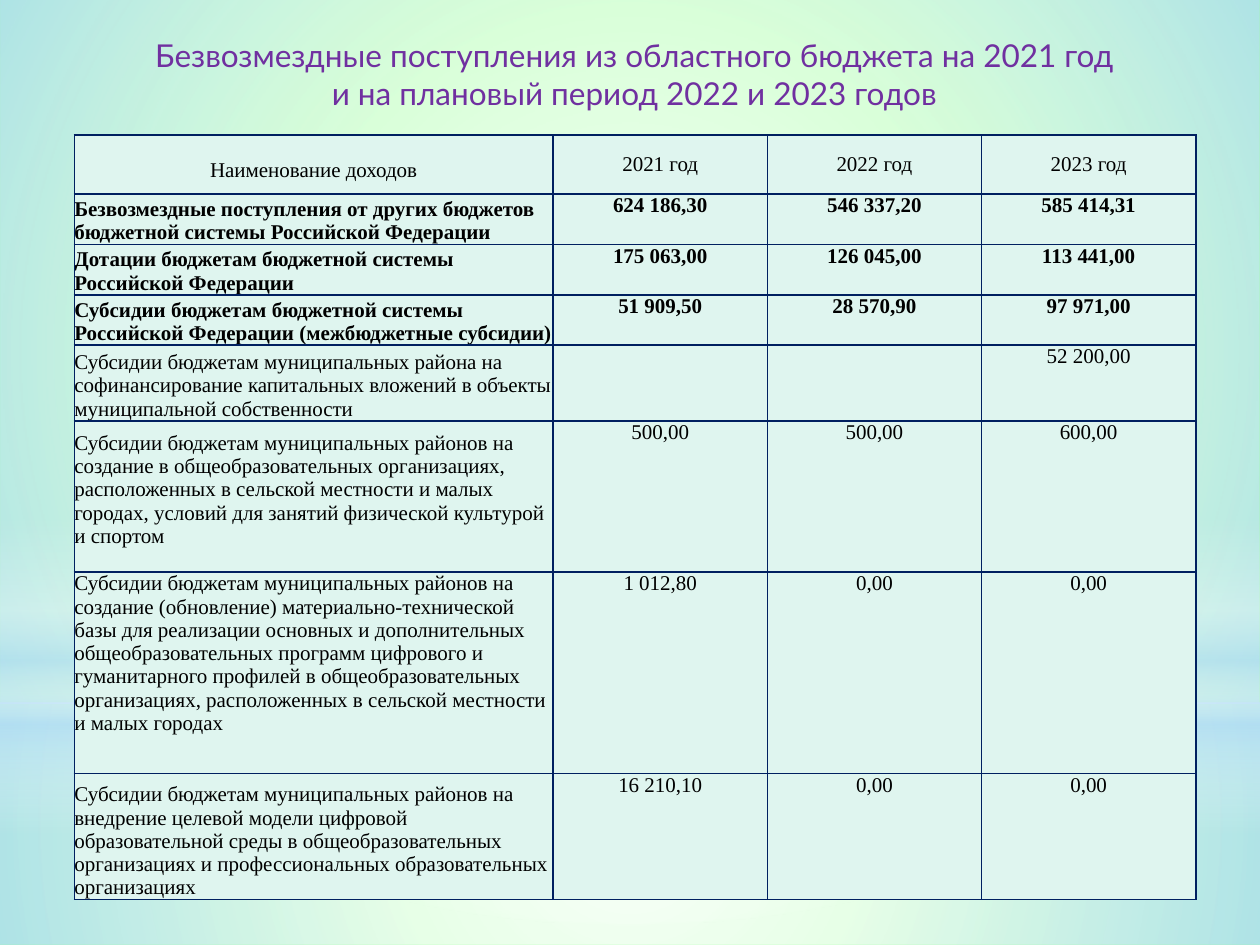
"""Build the slide on free transfers from the regional budget."""
from pptx import Presentation
from pptx import util as u
from pptx.dml.color import RGBColor
from pptx.enum import shapes, text
from pptx.oxml import parse_xml
from pptx.oxml.ns import nsdecls, qn

COLORS = {
    "background": "99FF99", "white": "FFFFFF", "sky": "B4DCFA",
    "title": "7030A0", "ink": "000000", "cell": "DFF5EF", "border": "002060",
}
TITLE = "Безвозмездные поступления из областного бюджета на 2021 год и на плановый период 2022 и 2023 годов"
HEADER = ["Наименование доходов", "2021 год", "2022 год", "2023 год"]
TOTALS = [
    ["Безвозмездные поступления от других бюджетов бюджетной системы Российской Федерации",
     "624 186,30", "546 337,20", "585 414,31"],
    ["Дотации бюджетам бюджетной системы Российской Федерации",
     "175 063,00", "126 045,00", "113 441,00"],
    ["Субсидии бюджетам бюджетной системы Российской Федерации (межбюджетные субсидии)",
     "51 909,50", "28 570,90", "97 971,00"],
]
SUBSIDIES = [
    ["Субсидии бюджетам муниципальных района на софинансирование капитальных вложений "
     "в объекты муниципальной собственности", "", "", "52 200,00"],
    ["Субсидии бюджетам муниципальных районов на создание в общеобразовательных организациях, "
     "расположенных в сельской местности и малых городах, условий для занятий физической "
     "культурой и спортом", "500,00", "500,00", "600,00"],
    ["Субсидии бюджетам муниципальных районов на создание (обновление) материально-технической "
     "базы для реализации основных и дополнительных общеобразовательных программ цифрового и "
     "гуманитарного профилей в общеобразовательных организациях, расположенных в сельской "
     "местности и малых городах", "1 012,80", "0,00", "0,00"],
    ["Субсидии бюджетам муниципальных районов на внедрение целевой модели цифровой "
     "образовательной среды в общеобразовательных организациях и профессиональных "
     "образовательных организациях", "16 210,10", "0,00", "0,00"],
]
COLUMN_WIDTHS = [3.8, 1.7, 1.7, 1.7]
ROW_HEIGHTS = [0.47, 0.4, 0.4, 0.4, 0.6, 1.2, 1.6, 1.0]
LINE_HEIGHT = 0.19
SPACED_ROW, TOP_ROW = 5, 6

CIRCLE = '<a:path path="circle"><a:fillToRect l="50000" t="50000" r="50000" b="50000"/></a:path>'
DOWN = '<a:lin ang="5400000" scaled="1"/>'
RECTANGLE, OVAL = shapes.MSO_SHAPE.RECTANGLE, shapes.MSO_SHAPE.OVAL
BACKDROP = [
    (RECTANGLE, 5.58, 1.92, CIRCLE, [(0, "white", 91), (37, "white", 76), (100, "sky", 79)]),
    (RECTANGLE, 0, 5.58, CIRCLE, [(0, "white", 89), (48, "white", 62), (100, "sky", 79)]),
    (RECTANGLE, 4.12, 2.5, DOWN, [(0, "white", 0), (29, "white", 30), (45, "sky", 40),
                                  (55, "white", 26), (65, "sky", 60), (100, "white", 0)]),
    (OVAL, 1.75, 5.58, CIRCLE, [(0, "white", 100), (56, "white", 0)]),
]


def color(name):
    return RGBColor.from_string(COLORS[name])


def write(frame, words, font="Times New Roman", size=12, bold=False, ink="ink", centered=True):
    frame.word_wrap = True
    paragraph = frame.paragraphs[0]
    paragraph.text = words
    paragraph.alignment = text.PP_ALIGN.CENTER if centered else text.PP_ALIGN.LEFT
    paragraph.font.name = font
    paragraph.font.size = u.Pt(size)
    paragraph.font.bold = bold
    paragraph.font.color.rgb = color(ink)


def add_glow(slide, kind, top, height, direction, stops):
    shape = slide.shapes.add_shape(kind, 0, u.Inches(top), u.Inches(10), u.Inches(height))
    shape.shadow.inherit = False
    shape.line.fill.background()
    shape.fill.background()
    stop_xml = "".join(
        f'<a:gs pos="{place * 1000}"><a:srgbClr val="{COLORS[name]}">'
        f'<a:alpha val="{opacity * 1000}"/></a:srgbClr></a:gs>'
        for place, name, opacity in stops)
    gradient = parse_xml(f'<a:gradFill {nsdecls("a")} rotWithShape="1">'
                         f'<a:gsLst>{stop_xml}</a:gsLst>{direction}</a:gradFill>')
    properties = shape._element.spPr
    properties.replace(properties.find(qn("a:noFill")), gradient)


def style_cell(cell):
    cell.margin_left = cell.margin_right = cell.margin_top = cell.margin_bottom = 0
    properties = cell._tc.get_or_add_tcPr()
    for side in ("lnL", "lnR", "lnT", "lnB"):
        properties.append(parse_xml(
            f'<a:{side} {nsdecls("a")} w="12700"><a:solidFill>'
            f'<a:srgbClr val="{COLORS["border"]}"/></a:solidFill></a:{side}>'))
    cell.fill.solid()
    cell.fill.fore_color.rgb = color("cell")


def add_income_table(slide):
    rows = [HEADER] + TOTALS + SUBSIDIES
    table = slide.shapes.add_table(
        len(rows), len(HEADER), u.Inches(0.59), u.Inches(1.07),
        u.Inches(sum(COLUMN_WIDTHS)), u.Inches(sum(ROW_HEIGHTS))).table
    for column, width in zip(table.columns, COLUMN_WIDTHS):
        column.width = u.Inches(width)
    for row, height in zip(table.rows, ROW_HEIGHTS):
        row.height = u.Inches(height)
    for i, row in enumerate(rows):
        for j, words in enumerate(row):
            cell = table.cell(i, j)
            style_cell(cell)
            write(cell.text_frame, words, bold=1 <= i <= len(TOTALS), centered=i == 0 or j > 0)
            if i == 0 and j > 0:
                cell.vertical_anchor = text.MSO_ANCHOR.MIDDLE
            elif j == 0 and i not in (0, TOP_ROW):
                cell.vertical_anchor = text.MSO_ANCHOR.BOTTOM
    table.cell(0, 0).margin_top = u.Inches(LINE_HEIGHT)
    table.cell(SPACED_ROW, 0).margin_bottom = u.Inches(LINE_HEIGHT)


def main():
    presentation = Presentation()
    presentation.slide_width, presentation.slide_height = u.Inches(10), u.Inches(7.5)
    slide = presentation.slides.add_slide(presentation.slide_layouts[5])
    slide.background.fill.solid()
    slide.background.fill.fore_color.rgb = color("background")
    for glow in BACKDROP:
        add_glow(slide, *glow)

    title = slide.shapes.title
    slide.shapes._spTree.append(title._element)
    title.left, title.top = u.Inches(1.06), u.Inches(0.23)
    title.width, title.height = u.Inches(7.95), u.Inches(0.71)
    title.text_frame.vertical_anchor = text.MSO_ANCHOR.MIDDLE
    write(title.text_frame, TITLE, font="Lato", size=18, ink="title")
    title.text_frame.auto_size = text.MSO_AUTO_SIZE.NONE

    add_income_table(slide)
    presentation.save("out.pptx")


if __name__ == "__main__":
    main()
